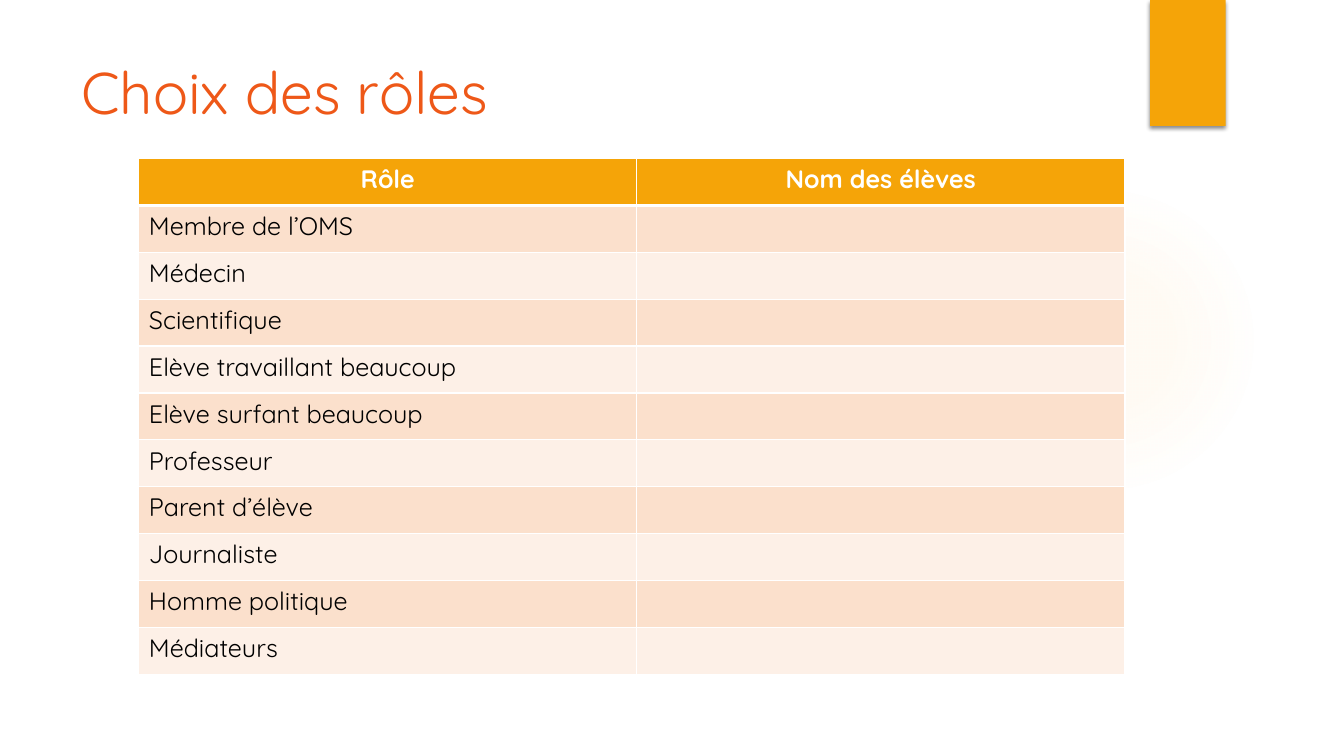
from pptx import Presentation
from pptx.dml.color import RGBColor
from pptx.enum import shapes as kinds, text as txt
from pptx.oxml import parse_xml
from pptx.oxml.ns import qn
from pptx.util import Pt

FONT = "Quicksand"
GOLD, WHITE, BLACK = "F5A408", "FFFFFF", "000000"
BANDS = ["FBE0CC", "FDF0E7"]
NS = 'xmlns:a="http://schemas.openxmlformats.org/drawingml/2006/main"'
ROLES = ["Membre de l’OMS", "Médecin", "Scientifique",
         "Elève travaillant beaucoup", "Elève surfant beaucoup", "Professeur",
         "Parent d’élève", "Journaliste", "Homme politique", "Médiateurs"]


def paint(target, color):
    """Apply a hex colour to a fill or a font."""
    if hasattr(target, "solid"):
        target.solid()
        target.fore_color.rgb = RGBColor.from_string(color)
    else:
        target.color.rgb = RGBColor.from_string(color)


def style(para, size, color, bold=False):
    for run in para.runs:
        run.font.name, run.font.size, run.font.bold = FONT, Pt(size), bold
        paint(run.font, color)


def add_form(slide, kind, box):
    form = slide.shapes.add_shape(kind, *map(Pt, box))
    form.shadow.inherit = False
    form.line.fill.background()
    return form


# Pale round glow behind the table
def add_glow(slide, box):
    glow = add_form(slide, kinds.MSO_SHAPE.OVAL, box)
    glow.fill.background()
    stops = "".join(
        f'<a:gs pos="{pos}000"><a:srgbClr val="FAC96A">'
        f'<a:alpha val="{alpha}000"/></a:srgbClr></a:gs>'
        for pos, alpha in [(0, 7), (36, 6), (69, 0)])
    props = glow._element.spPr
    props.replace(props.find(qn("a:noFill")), parse_xml(
        f'<a:gradFill {NS}><a:gsLst>{stops}</a:gsLst><a:path path="circle">'
        '<a:fillToRect l="50000" t="50000" r="50000" b="50000"/>'
        '</a:path></a:gradFill>'))


# Gold tab hanging from the top edge
def add_tab(slide, box):
    tab = add_form(slide, kinds.MSO_SHAPE.RECTANGLE, box)
    paint(tab.fill, GOLD)
    tab._element.spPr.find(qn("a:effectLst")).append(parse_xml(
        f'<a:outerShdw {NS} blurRad="{Pt(3)}" dist="{Pt(2)}" dir="5400000" '
        'rotWithShape="0"><a:srgbClr val="000000"><a:alpha val="45000"/>'
        '</a:srgbClr></a:outerShdw>'))


# Slide title
def add_title(slide, box, words):
    frame = slide.shapes.add_textbox(*map(Pt, box)).text_frame
    frame.word_wrap = True
    frame.text = words
    style(frame.paragraphs[0], 42, "EE5818")


def edge(cell, side, width):
    cell._tc.get_or_add_tcPr().append(parse_xml(
        f'<a:ln{side} {NS} w="{Pt(width)}"><a:solidFill>'
        f'<a:srgbClr val="{WHITE}"/></a:solidFill></a:ln{side}>'))


# Table of roles, with an empty column for the names
def add_roles(slide, box, split):
    rows = [("Rôle", "Nom des élèves")] + [(role, "") for role in ROLES]
    grid = slide.shapes.add_table(len(rows), 2, *map(Pt, box)).table
    for col, width in zip(grid.columns, (split, box[2] - split)):
        col.width = Pt(width)
    for i, row in enumerate(rows):
        grid.rows[i].height = Pt(box[3] / len(rows))
        for j, words in enumerate(row):
            cell = grid.cell(i, j)
            for side in "LRTB":
                thick = (i, side) in [(0, "B"), (1, "T")]
                edge(cell, side, 3 if thick else 1)
            paint(cell.fill, BANDS[(i - 1) % 2] if i else GOLD)
            cell.text_frame.text = words
            para = cell.text_frame.paragraphs[0]
            if i == 0:
                para.alignment = txt.PP_ALIGN.CENTER
            style(para, 18, BLACK if i else WHITE, bold=i == 0)


def main():
    deck = Presentation()
    deck.slide_width, deck.slide_height = Pt(960), Pt(540)
    slide = deck.slides.add_slide(deck.slide_layouts[6])
    add_glow(slide, (677.5, 131.8, 221.8, 221.8))
    add_tab(slide, (821.5, 0, 54, 90))
    add_title(slide, (51, 36, 741, 110), "Choix des rôles")
    add_roles(slide, (99.2, 113.3, 704.4, 368.5), split=355.4)
    deck.save("out.pptx")


if __name__ == "__main__":
    main()
